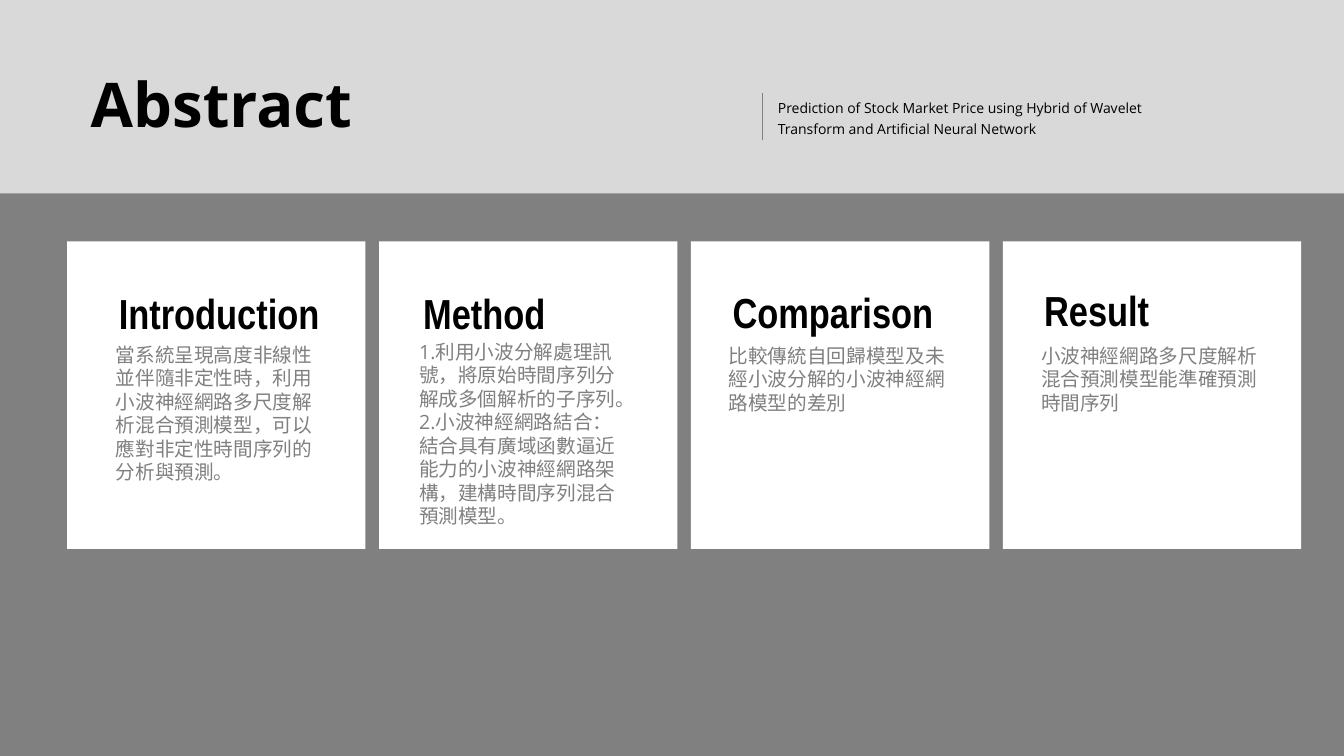
from dataclasses import dataclass

from lxml.etree import SubElement
from pptx import Presentation
from pptx.dml.color import RGBColor
from pptx.enum.shapes import MSO_CONNECTOR, MSO_SHAPE
from pptx.enum.text import MSO_ANCHOR, MSO_AUTO_SIZE, PP_ALIGN
from pptx.oxml.ns import qn
from pptx.util import Pt


@dataclass(frozen=True)
class Theme:
    """Colours, fonts and type sizes of the slide."""
    pale: str = "D9D9D9"
    grey: str = "808080"
    white: str = "FFFFFF"
    black: str = "000000"
    sans: str = "Open Sans"
    narrow: str = "Arial Narrow"
    title: int = 44
    head: int = 30
    body: int = 14
    note: int = 10


class Deck:
    """Draws styled elements on the current slide."""

    def __init__(self, theme):
        """Start a wide deck with one title-only slide."""
        self.theme = theme
        self.show = Presentation()
        self.show.slide_width, self.show.slide_height = Pt(960), Pt(540)
        self.slide = self.show.slides.add_slide(self.show.slide_layouts[5])
        self.slide.background.fill.solid()
        self.slide.background.fill.fore_color.rgb = RGBColor.from_string(theme.pale)

    def rect(self, box, color):
        """Add a plain filled rectangle."""
        shape = self.slide.shapes.add_shape(MSO_SHAPE.RECTANGLE, *map(Pt, box))
        shape.shadow.inherit = False
        shape.fill.solid()
        shape.fill.fore_color.rgb = RGBColor.from_string(color)
        shape.line.fill.background()

    def rule(self, x, top, end):
        """Add a thin vertical line."""
        line = self.slide.shapes.add_connector(
            MSO_CONNECTOR.STRAIGHT, Pt(x), Pt(top), Pt(x), Pt(end))
        line.line.color.rgb = RGBColor.from_string(self.theme.grey)
        line.line.width = Pt(0.5)
        SubElement(line._element.spPr, qn("a:effectLst"))

    def style(self, shape, lines, size, font, color, bold=False, lead=None):
        """Fill a shape with paragraphs of one style."""
        frame = shape.text_frame
        frame.text = "\n".join(lines)
        frame.word_wrap = True
        frame.auto_size = MSO_AUTO_SIZE.NONE
        frame.vertical_anchor = MSO_ANCHOR.TOP
        for para in frame.paragraphs:
            para.alignment = PP_ALIGN.LEFT
            para.font.size, para.font.name, para.font.bold = Pt(size), font, bold
            para.font.color.rgb = RGBColor.from_string(color)
            if lead:
                para.line_spacing = Pt(lead)

    def text(self, box, lines, *look, **more):
        """Add a text box."""
        shape = self.slide.shapes.add_textbox(*map(Pt, box))
        self.style(shape, lines, *look, **more)

    def title(self, box, words):
        """Place and format the title placeholder."""
        shape = self.slide.shapes.title
        shape.left, shape.top, shape.width, shape.height = map(Pt, box)
        theme = self.theme
        self.style(shape, [words], theme.title, theme.sans, theme.black,
                   bold=True, lead=35)


CARDS = [
    ("Introduction", (77.8, 203), (75.6, 241.2, 166.3, 108.7),
     ["當系統呈現高度非線性並伴隨非定性時，利用小波神經網路多尺度解析混合預測模型，可以應對非定性時間序列的分析與預測。"]),
    ("Method", (295.2, 203), (292.3, 239, 162.7, 143.3),
     ["1.利用小波分解處理訊號，將原始時間序列分解成多個解析的子序列。",
      "2.小波神經網路結合：結合具有廣域函數逼近能力的小波神經網路架構，建構時間序列混合預測模型。"]),
    ("Comparison", (516.2, 202.3), (513.4, 241.9, 173.5, 58.3),
     ["比較傳統自回歸模型及未經小波分解的小波神經網路模型的差別"]),
    ("Result", (738.7, 200.9), (736.6, 241.9, 177.1, 58.3),
     ["小波神經網路多尺度解析混合預測模型能準確預測時間序列"]),
]


def main():
    """Build the abstract slide."""
    theme = Theme()
    deck = Deck(theme)
    deck.rect((0, 138.2, 960, 401.8), theme.grey)
    deck.title((57.6, 61.2, 359.3, 43.9), "Abstract")
    deck.text((548.6, 64.8, 312.5, 36.7),
              ["Prediction of Stock Market Price using Hybrid of Wavelet "
               "Transform and Artificial Neural Network"],
              theme.note, theme.sans, theme.black, lead=15)
    deck.rule(544.3, 66.2, 100.1)
    for i, (head, spot, box, lines) in enumerate(CARDS):
        deck.rect((48 + 222.8 * i, 172.5, 213.1, 219.6), theme.white)
        deck.text((*spot, 162, 42.5), [head], theme.head, theme.narrow,
                  theme.black, bold=True, lead=35)
        deck.text(box, lines, theme.body, theme.sans, theme.grey)
    deck.show.save("out.pptx")


if __name__ == "__main__":
    main()
